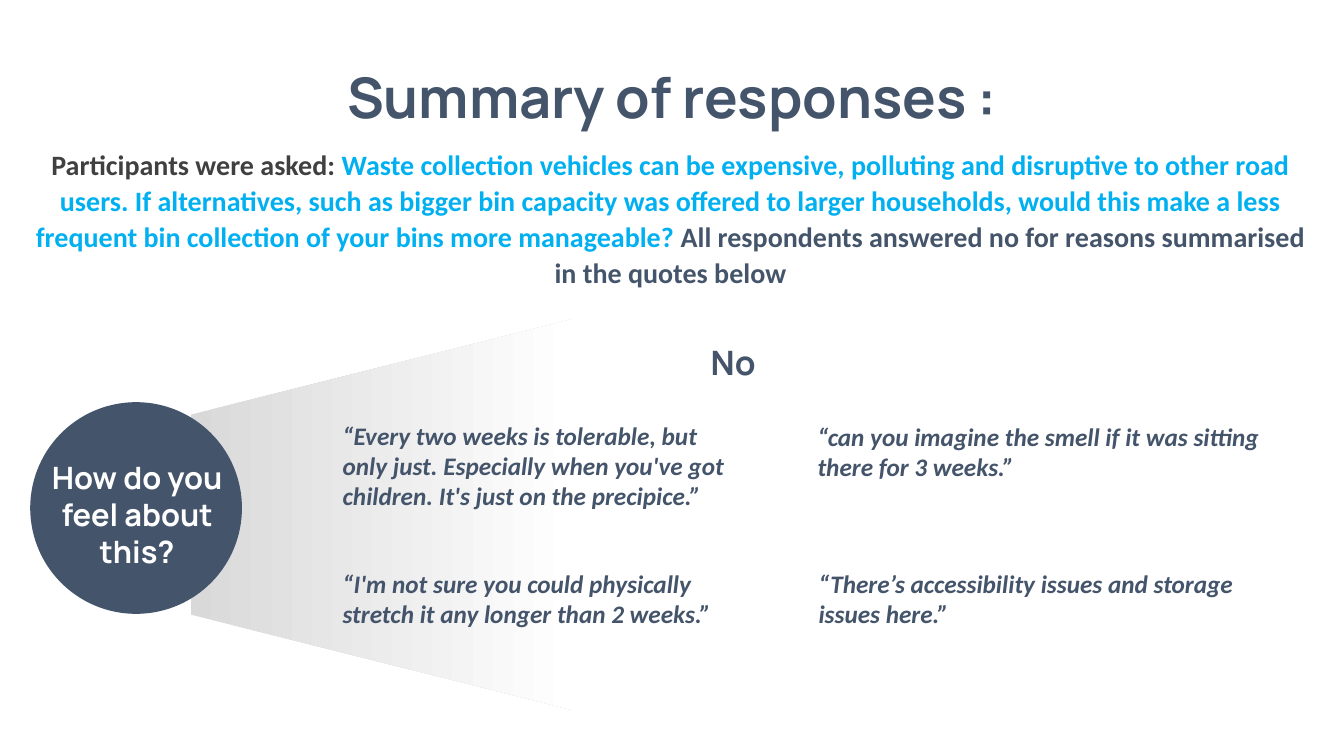
from pptx import Presentation
from pptx.dml.color import RGBColor
from pptx.enum.shapes import MSO_SHAPE as Shape
from pptx.enum.text import MSO_ANCHOR as Anchor, MSO_AUTO_SIZE as AutoSize, PP_ALIGN as Align
from pptx.util import Inches, Pt

SLATE = RGBColor(0x44, 0x54, 0x6A)
CHARCOAL = RGBColor(0x40, 0x40, 0x40)
SKY = RGBColor(0x00, 0xB0, 0xF0)
SILVER = RGBColor(0xD9, 0xD9, 0xD9)
WHITE = RGBColor(0xFF, 0xFF, 0xFF)
HEADING_FONT = "Manrope"
BODY_FONT = "Calibri"

TITLE = "Summary of responses :"
QUESTION = [
    ("Participants were asked: ", CHARCOAL),
    ("Waste collection vehicles can be expensive, polluting and disruptive to other "
     "road users. If alternatives, such as bigger bin capacity was offered to larger "
     "households, would this make a less frequent bin collection of your bins more "
     "manageable? ", SKY),
    ("All respondents answered no for reasons summarised in the quotes below", SLATE),
]
ANSWER = "No"
PROMPT = "How do you feel about this?"
QUOTES = [
    ("“Every two weeks is tolerable, but only just. Especially when you've got "
     "children. It's just on the precipice.”", (3.3, 4.12, 4.06, 1.01)),
    ("“can you imagine the smell if it was sitting there for 3 weeks.”",
     (8.01, 4.13, 4.75, 0.71)),
    ("“I'm not sure you could physically stretch it any longer than 2 weeks.”",
     (3.3, 5.59, 3.96, 0.71)),
    ("“There’s accessibility issues and storage issues here.”",
     (8.02, 5.59, 4.86, 0.71)),
]


def inches(place):
    return [Inches(length) for length in place]


def write(box, spans, size, font, align=Align.LEFT, italic=None):
    frame = box.text_frame
    frame.word_wrap = True
    frame.auto_size = AutoSize.SHAPE_TO_FIT_TEXT
    frame.vertical_anchor = Anchor.TOP
    para = frame.paragraphs[0]
    para.alignment = align
    for text, color in spans:
        span = para.add_run()
        span.text = text
        span.font.size = Pt(size)
        span.font.name = font
        span.font.bold = True
        span.font.italic = italic
        span.font.color.rgb = color
    return para


def add_text(page, place, *style, **options):
    return write(page.shapes.add_textbox(*inches(place)), *style, **options)


def add_plain_shape(page, kind, place):
    shape = page.shapes.add_shape(kind, *inches(place))
    shape.shadow.inherit = False
    shape.line.fill.background()
    return shape


def add_beam(page):
    beam = add_plain_shape(page, Shape.TRAPEZOID, (1.85, 3.21, 3.88, 3.79))
    beam.rotation = 270
    beam.fill.gradient()
    beam.fill.gradient_angle = 270
    for stop, color, position in zip(beam.fill.gradient_stops, (SILVER, WHITE), (0, 1)):
        stop.color.rgb = color
        stop.position = position


def main():
    deck = Presentation()
    deck.slide_width, deck.slide_height = Inches(13.33), Inches(7.5)
    page = deck.slides.add_slide(deck.slide_layouts[5])

    title = page.shapes.title
    title.left, title.top, title.width, title.height = inches((3.09, 0.57, 7.15, 0.77))
    write(title, [(TITLE, SLATE)], 40, HEADING_FONT, Align.CENTER)
    title.text_frame.word_wrap = False

    question = add_text(page, (0.21, 1.39, 12.88, 1.53), QUESTION, 20, BODY_FONT, Align.CENTER)
    question.line_spacing = 1.07
    question.space_after = Pt(8)

    add_beam(page)
    circle = add_plain_shape(page, Shape.OVAL, (0.3, 3.99, 2.1, 2.1))
    circle.fill.solid()
    circle.fill.fore_color.rgb = SLATE

    add_text(page, (6.95, 3.34, 1.52, 0.5), [(ANSWER, SLATE)], 24, HEADING_FONT)
    add_text(page, (0.31, 4.5, 2.1, 1.21), [(PROMPT, WHITE)], 22, HEADING_FONT, Align.CENTER)
    for quote, place in QUOTES:
        add_text(page, place, [(quote, SLATE)], 18, BODY_FONT, italic=True)

    deck.save("out.pptx")


if __name__ == "__main__":
    main()
